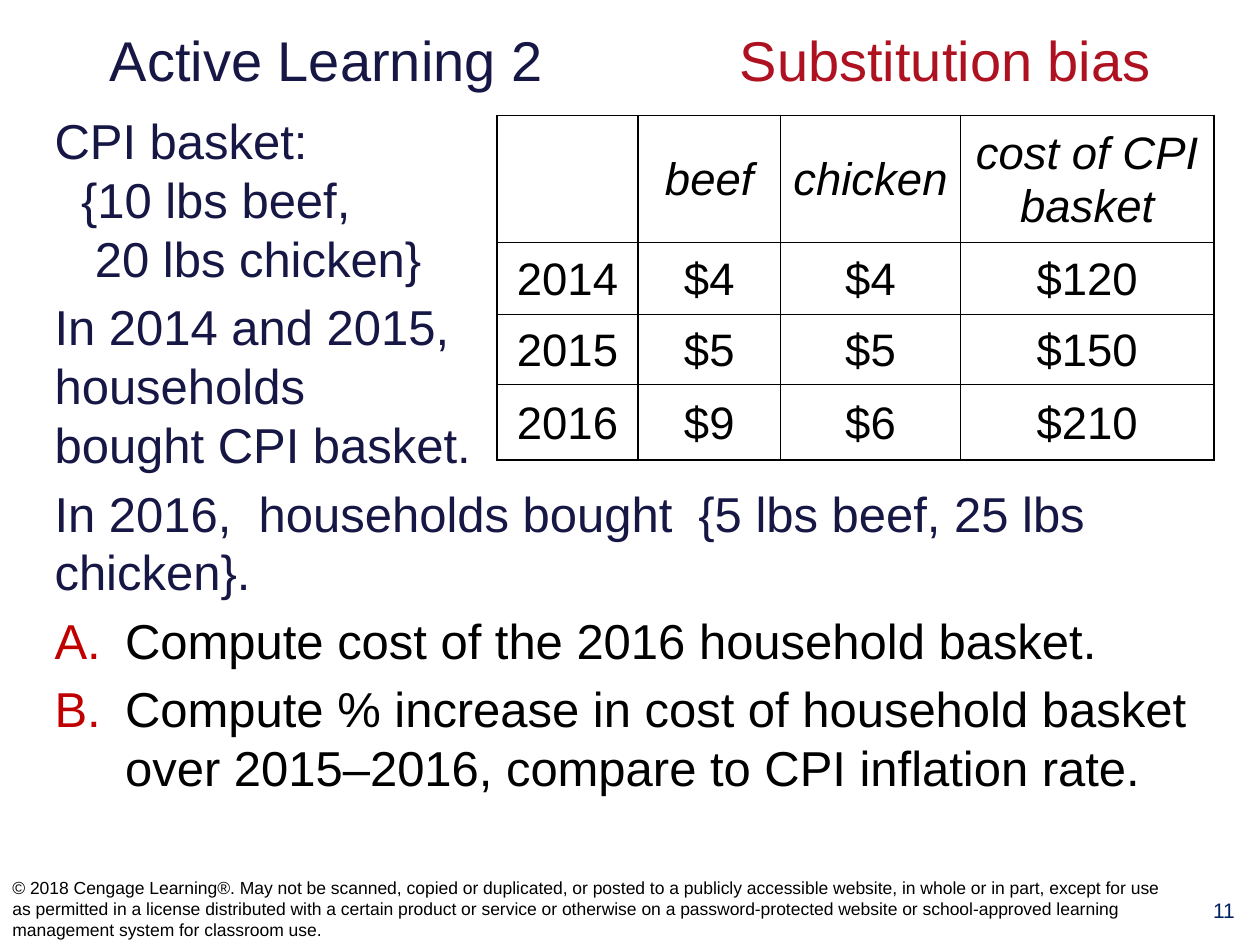
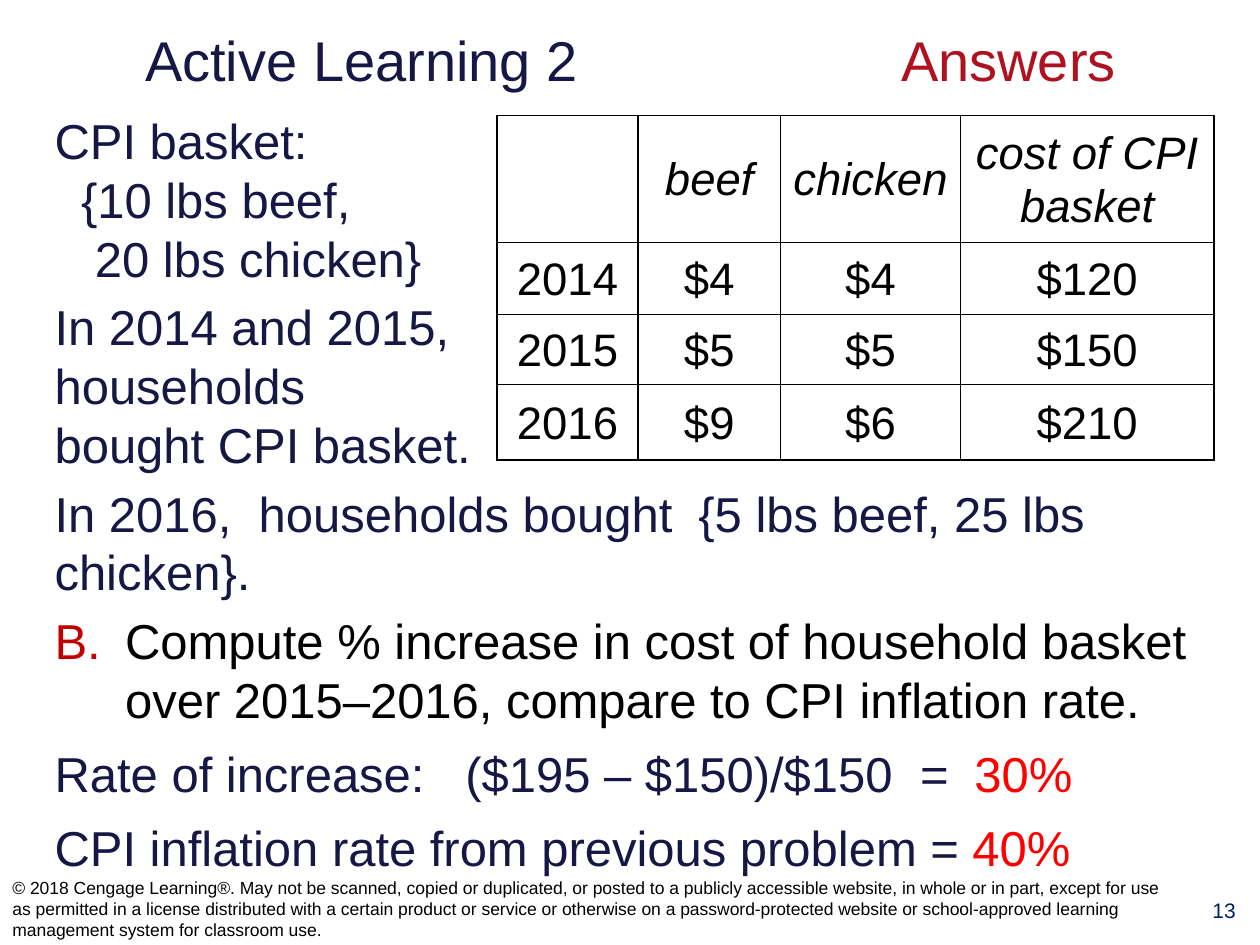
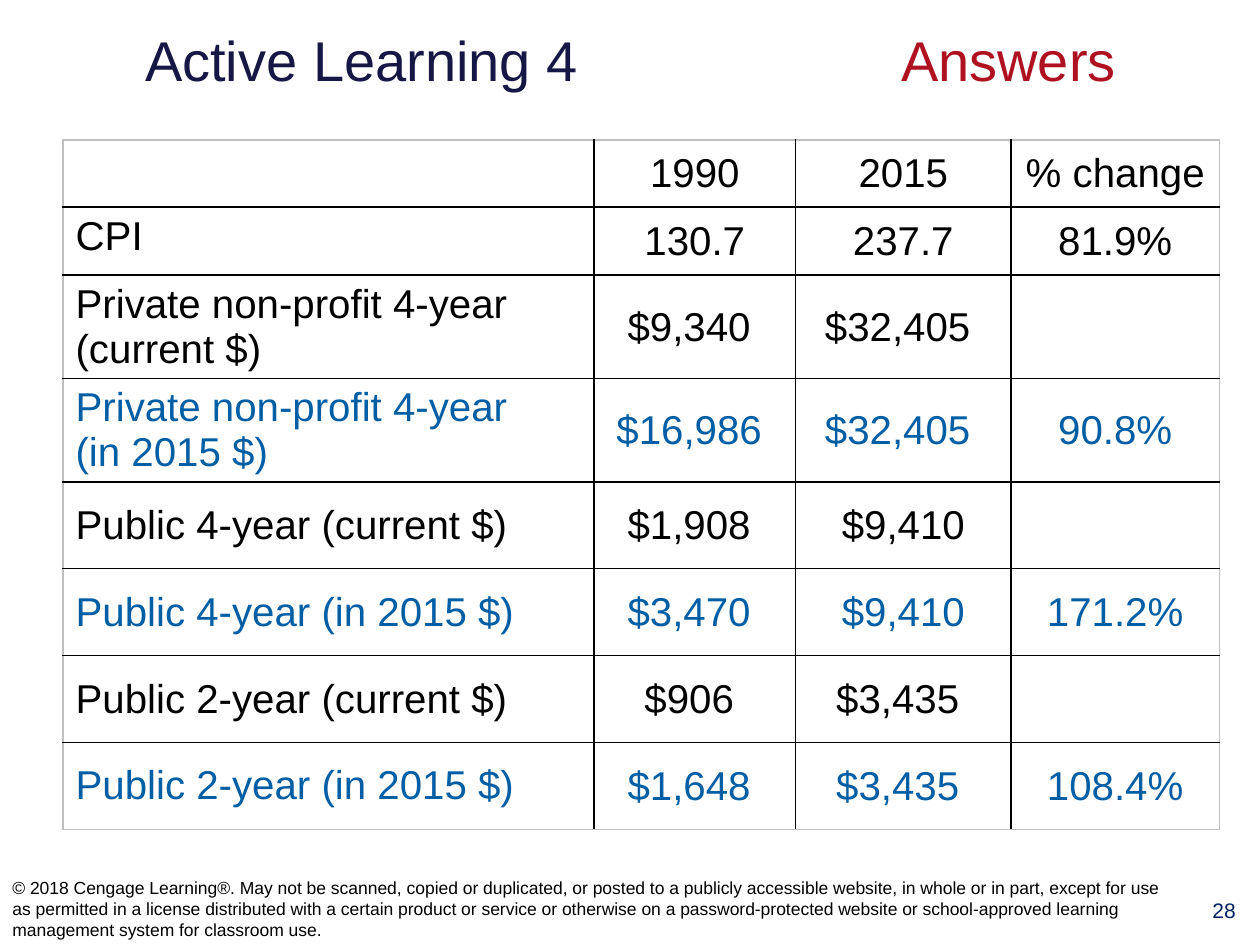
import pptx
import pptx.dml.color
import pptx.enum.text
import pptx.oxml
import pptx.oxml.ns
import pptx.util
from lxml import etree

RGBColor = pptx.dml.color.RGBColor
Pt = pptx.util.Pt
ALIGN = pptx.enum.text.PP_ALIGN
ANCHOR = pptx.enum.text.MSO_ANCHOR

NAVY = RGBColor(0x17, 0x17, 0x45)
CRIMSON = RGBColor(0xAE, 0x12, 0x21)
MARKER_RED = RGBColor(0xC0, 0x00, 0x00)
ANSWER_RED = RGBColor(0xFF, 0x00, 0x00)
NUMBER_BLUE = RGBColor(0x00, 0x20, 0x60)
REAL_BLUE = RGBColor(0x00, 0x5E, 0xA4)
BLACK = RGBColor(0x00, 0x00, 0x00)
WHITE = RGBColor(0xFF, 0xFF, 0xFF)
GRAY = RGBColor(0xBF, 0xBF, 0xBF)

FONT = "Arial"
SLIDE_WIDTH = pptx.util.Inches(10)
SLIDE_HEIGHT = pptx.util.Inches(7.5)
COLUMN = SLIDE_WIDTH / 100
ROW = SLIDE_HEIGHT / 75

TITLE_AREA = (1.7, 1.1, 96.7, 7.2)
BODY_AREA = (3.35, 8.3, 95, 62.2)
NUMBER_AREA = (94.3, 70.75, 5.7, 4.1)
COPYRIGHT_AREA = (0, 69.2, 94.1, 5.8)

COPYRIGHT = (
    "© 2018 Cengage Learning®. May not be scanned, copied or duplicated, or posted "
    "to a publicly accessible website, in whole or in part, except for use as permitted "
    "in a license distributed with a certain product or service or otherwise on a "
    "password-protected website or school-approved learning management system for "
    "classroom use."
)

BODY_FORMAT = {"line_spacing": 1.0, "space_before": Pt(5.5)}
LINE_FORMAT = {"line_spacing": 1.0, "space_before": Pt(0)}
RATE_FORMAT = {"line_spacing": 1.05, "space_before": Pt(7)}
PRICE_FORMAT = {"line_spacing": 1.05, "alignment": ALIGN.CENTER}
CENTERED = {"alignment": ALIGN.CENTER}
PLAIN_MARGINS = (0.1, 0.05, 0.1, 0.05)
TWO_LINE_MARGINS = (0.1, 0.02, 0.1, 0.02)
TIGHT_MARGINS = (0.01, 0.01, 0.01, 0)

PRICES = [
    ["", "beef", "chicken", "cost of CPI basket"],
    ["2014", "$4", "$4", "$120"],
    ["2015", "$5", "$5", "$150"],
    ["2016", "$9", "$6", "$210"],
]
TUITION = [
    ["", "1990", "2015", "% change"],
    ["CPI", "130.7", "237.7", "81.9%"],
    ["Private non-profit 4-year\n(current $)", "$9,340 ", "$32,405 ", ""],
    ["Private non-profit 4-year\n(in 2015 $)", "$16,986 ", "$32,405 ", "90.8%"],
    ["Public 4-year (current $)", "$1,908 ", "$9,410", ""],
    ["Public 4-year (in 2015 $)", "$3,470 ", "$9,410", "171.2%"],
    ["Public 2-year (current $)", "$906 ", "$3,435 ", ""],
    ["Public 2-year (in 2015 $)", "$1,648 ", "$3,435 ", "108.4%"],
]
COMPUTE_COST = "Compute cost of the 2016 household basket."
COMPUTE_INCREASE = (
    "Compute % increase in cost of household basket over 2015–2016, "
    "compare to CPI inflation rate."
)


def place(left, top, width, height):
    return tuple(
        round(value * unit)
        for value, unit in zip((left, top, width, height), (COLUMN, ROW, COLUMN, ROW))
    )


def apply_format(target, values):
    for name, value in values.items():
        setattr(target, name, value)


def break_line(paragraph, size):
    paragraph.add_line_break()
    etree.SubElement(paragraph._p[-1], pptx.oxml.ns.qn("a:rPr"), sz=str(size * 100))


def write(paragraph, pieces, size, values, italic=False):
    apply_format(paragraph, values)
    for text, color in pieces:
        for index, line in enumerate(text.split("\n")):
            if index:
                break_line(paragraph, size)
            run = paragraph.add_run()
            run.text = line
            apply_format(run.font, {"name": FONT, "size": Pt(size), "bold": False, "italic": italic})
            run.font.color.rgb = color


def add_text_box(slide, area, anchor=ANCHOR.TOP, wrap=True):
    frame = slide.shapes.add_textbox(*place(*area)).text_frame
    apply_format(frame, {"word_wrap": wrap, "vertical_anchor": anchor})
    return frame


def indent(paragraph, left, first=0):
    properties = paragraph._p.get_or_add_pPr()
    properties.set("marL", str(pptx.util.Inches(left)))
    properties.set("indent", str(pptx.util.Inches(first)))
    return properties


def letter_marker(paragraph, start):
    properties = indent(paragraph, 0.56, -0.56)
    marker_color = etree.SubElement(properties, pptx.oxml.ns.qn("a:buClr"))
    etree.SubElement(marker_color, pptx.oxml.ns.qn("a:srgbClr"), val=str(MARKER_RED))
    numbering = etree.SubElement(properties, pptx.oxml.ns.qn("a:buAutoNum"), type="alphaUcPeriod")
    if start > 1:
        numbering.set("startAt", str(start))


def tab_stops(paragraph, positions):
    tabs = etree.SubElement(paragraph._p.get_or_add_pPr(), pptx.oxml.ns.qn("a:tabLst"))
    for position in positions:
        etree.SubElement(
            tabs, pptx.oxml.ns.qn("a:tab"), pos=str(pptx.util.Inches(position)), algn="l"
        )


def add_slide(presentation, topic, heading_stop, heading, number):
    slide = presentation.slides.add_slide(presentation.slide_layouts[6])
    title = add_text_box(slide, TITLE_AREA, ANCHOR.MIDDLE, wrap=False).paragraphs[0]
    tab_stops(title, [heading_stop])
    write(title, [(topic + "\t", NAVY), (heading, CRIMSON)], 32, CENTERED)
    page = add_text_box(slide, NUMBER_AREA)
    write(page.paragraphs[0], [(str(number), NUMBER_BLUE)], 12, CENTERED)
    notice = add_text_box(slide, COPYRIGHT_AREA, ANCHOR.MIDDLE)
    write(notice.paragraphs[0], [(COPYRIGHT, BLACK)], 10, {})
    return slide


def add_basket_text(slide):
    frame = add_text_box(slide, BODY_AREA)
    write(frame.paragraphs[0], [("CPI basket:", NAVY)], 28, LINE_FORMAT)
    for text, left in (("{10 lbs beef,", 0.21), ("20 lbs chicken}", 0.32)):
        paragraph = frame.add_paragraph()
        indent(paragraph, left)
        write(paragraph, [(text, NAVY)], 28, LINE_FORMAT)
    for text, stops in (
        ("In 2014 and 2015,\nhouseholds\nbought CPI basket.", ()),
        ("In 2016,\thouseholds bought\t{5 lbs beef, 25 lbs chicken}.", (1.62, 5.11)),
    ):
        paragraph = frame.add_paragraph()
        if stops:
            tab_stops(paragraph, stops)
        write(paragraph, [(text, NAVY)], 28, BODY_FORMAT)
    return frame


def add_task(frame, text, start=1):
    paragraph = frame.add_paragraph()
    letter_marker(paragraph, start)
    write(paragraph, [(text, BLACK)], 28, BODY_FORMAT)


def add_rate(frame, label, answer, stops=()):
    paragraph = frame.add_paragraph()
    if stops:
        tab_stops(paragraph, stops)
    write(paragraph, [(label, NAVY), (answer, ANSWER_RED)], 28, RATE_FORMAT)


def set_border(cell, side, color):
    line = etree.SubElement(
        cell._tc.get_or_add_tcPr(), pptx.oxml.ns.qn("a:ln" + side), w=str(Pt(1))
    )
    fill = etree.SubElement(line, pptx.oxml.ns.qn("a:solidFill"))
    etree.SubElement(fill, pptx.oxml.ns.qn("a:srgbClr"), val=str(color))


def add_grid(slide, corner, widths, heights, outline):
    area = place(*corner, sum(widths), sum(heights))
    table = slide.shapes.add_table(len(heights), len(widths), *area).table
    apply_format(table, {"first_row": False, "horz_banding": False})
    for column, width in zip(table.columns, widths):
        column.width = round(width * COLUMN)
    for row, height in zip(table.rows, heights):
        row.height = round(height * ROW)
    for i in range(len(heights)):
        for j in range(len(widths)):
            cell = table.cell(i, j)
            edges = {
                "L": j == 0,
                "R": j == len(widths) - 1,
                "T": i == 0,
                "B": i == len(heights) - 1,
            }
            for side, outer in edges.items():
                set_border(cell, side, outline if outer else BLACK)
            cell.fill.solid()
            cell.fill.fore_color.rgb = WHITE
    return table


def fill_cell(cell, text, size, color, values, margins=PLAIN_MARGINS, anchor=ANCHOR.MIDDLE, italic=False):
    names = ("margin_left", "margin_top", "margin_right", "margin_bottom")
    apply_format(cell, {name: pptx.util.Inches(margin) for name, margin in zip(names, margins)})
    cell.vertical_anchor = anchor
    if text:
        write(cell.text_frame.paragraphs[0], [(text, color)], size, values, italic)


def add_price_table(slide):
    table = add_grid(slide, (39.45, 9.15), (11.2, 11.3, 14.3, 20.1), (10.1, 5.7, 5.5, 6), BLACK)
    for i, prices in enumerate(PRICES):
        for j, text in enumerate(prices):
            fill_cell(table.cell(i, j), text, 26, BLACK, PRICE_FORMAT, italic=i == 0)


def tuition_margins(text, numeric):
    if numeric:
        return TIGHT_MARGINS
    return TWO_LINE_MARGINS if "\n" in text else PLAIN_MARGINS


def add_tuition_table(slide):
    heights = [5.35, 5.4] + [8.2] * 2 + [6.9] * 4
    table = add_grid(slide, (5, 11.1), (42.15, 16, 17.1, 16.55), heights, GRAY)
    for i, amounts in enumerate(TUITION):
        color = REAL_BLUE if "in 2015 $" in amounts[0] else BLACK
        for j, text in enumerate(amounts):
            fill_cell(
                table.cell(i, j), text, 23, color,
                CENTERED if j else {},
                tuition_margins(text, i and j),
                ANCHOR.TOP if text == "CPI" else ANCHOR.MIDDLE,
            )


def main():
    presentation = pptx.Presentation()
    apply_format(presentation, {"slide_width": SLIDE_WIDTH, "slide_height": SLIDE_HEIGHT})

    question = add_slide(presentation, "Active Learning 2", 5, "Substitution bias", 11)
    tasks = add_basket_text(question)
    add_task(tasks, COMPUTE_COST)
    add_task(tasks, COMPUTE_INCREASE)
    add_price_table(question)

    answers = add_slide(presentation, "Active Learning 2", 6, "Answers", 13)
    rates = add_basket_text(answers)
    add_task(rates, COMPUTE_INCREASE, start=2)
    add_rate(rates, "Rate of increase:\t($195 – $150)/$150\t=\t", "30%", (3.26, 6.87, 7.3))
    add_rate(rates, "CPI inflation rate from previous problem = ", "40%")
    add_price_table(answers)

    tuition = add_slide(presentation, "Active Learning 4", 6, "Answers", 28)
    add_tuition_table(tuition)

    presentation.save("out.pptx")


if __name__ == "__main__":
    main()
